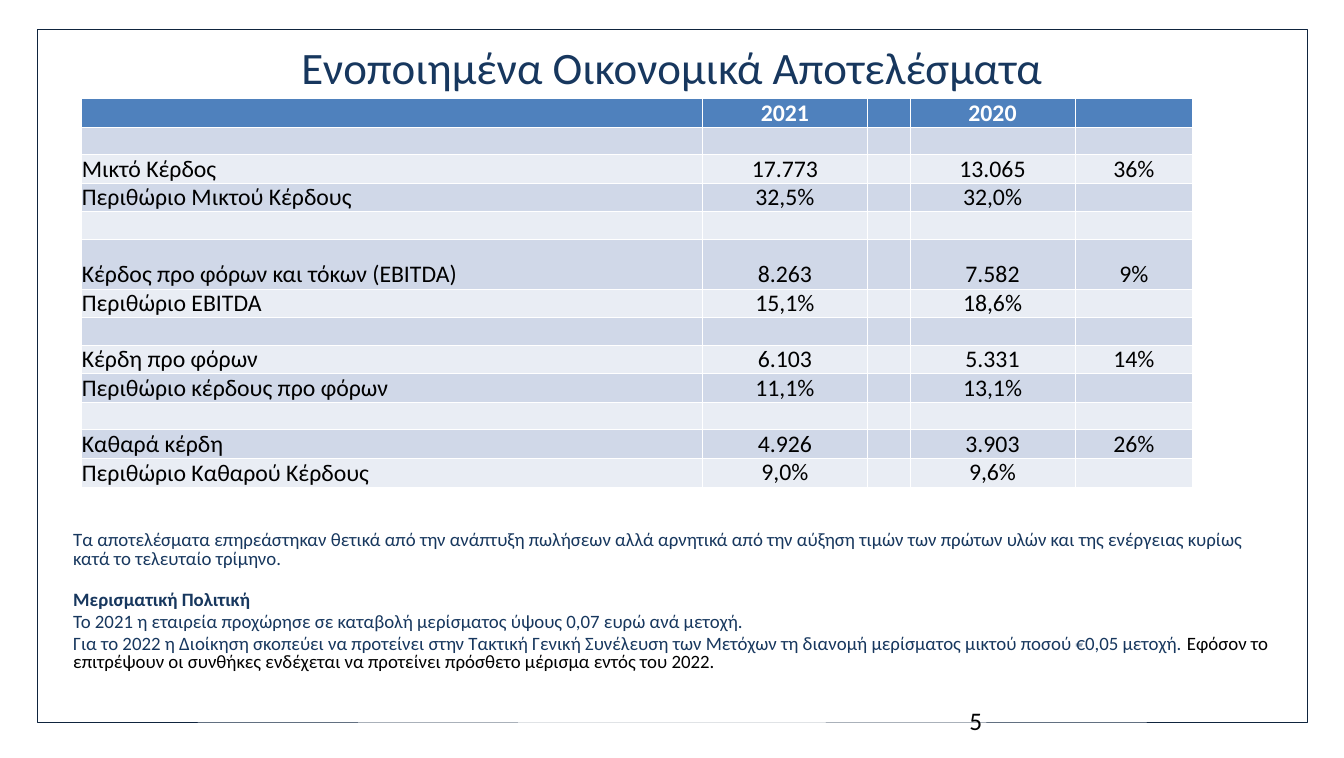
from dataclasses import dataclass
from pptx import Presentation
from pptx import util as u
from pptx.dml.color import RGBColor
from pptx.enum import shapes, text


@dataclass(frozen=True)
class Theme:
    font: str = "Calibri"
    navy: str = "17375E"
    edge: str = "0F243E"
    head: str = "4F81BD"
    bands: tuple = ("E9EDF4", "D0D8E8")
    black: str = "000000"
    white: str = "FFFFFF"
    title: float = 52.9
    cell: float = 28
    body: float = 22.2
    page: float = 29.8


T = Theme()
WIDE, HIGH = u.Inches(21.99), u.Inches(12.4)
GRID = 100
MID, LOW = text.MSO_ANCHOR.MIDDLE, text.MSO_ANCHOR.BOTTOM
LEFT, CENTER = text.PP_ALIGN.LEFT, text.PP_ALIGN.CENTER

HEADS = ["", "2021", "", "2020", ""]
ROWS = [
    [],
    ["Μικτό Κέρδος", "17.773", "", "13.065", "36%"],
    ["Περιθώριο Μικτού Κέρδους", "32,5%", "", "32,0%", ""],
    [],
    ["Κέρδος προ φόρων και τόκων (EBITDA)", "8.263", "", "7.582", "9%"],
    ["Περιθώριο EBITDA", "15,1%", "", "18,6%", ""],
    [],
    ["Κέρδη προ φόρων", "6.103", "", "5.331", "14%"],
    ["Περιθώριο κέρδους προ φόρων", "11,1%", "", "13,1%", ""],
    [],
    ["Καθαρά κέρδη", "4.926", "", "3.903", "26%"],
    ["Περιθώριο Καθαρού Κέρδους", "9,0%", "", "9,6%", ""],
]
COLS = [10.16, 2.7, 0.7, 2.7, 1.93]
TALL, FLAT, TALL_ROW = 0.82, 0.45, 5

NOTES = [
    ("Τα αποτελέσματα επηρεάστηκαν θετικά από την ανάπτυξη πωλήσεων αλλά αρνητικά από την αύξηση "
     "τιμών των πρώτων υλών και της ενέργειας κυρίως κατά το τελευταίο τρίμηνο.", 0, False),
    ("Μερισματική Πολιτική", 28, True),
    ("Το 2021 η εταιρεία προχώρησε σε καταβολή μερίσματος ύψους 0,07 ευρώ ανά μετοχή.", 4.4, False),
    ("Για το 2022 η Διοίκηση σκοπεύει να προτείνει στην Τακτική Γενική Συνέλευση των Μετόχων τη "
     "διανομή μερίσματος μικτού ποσού €0,05 μετοχή. ", 4.4, False),
]
EXTRA = ("Εφόσον το επιτρέψουν οι συνθήκες ενδέχεται να προτείνει πρόσθετο μέρισμα "
         "εντός του 2022.")


def place(x, y, w, h):
    return [round(n * side / GRID) for n, side in ((x, WIDE), (y, HIGH), (w, WIDE), (h, HIGH))]


def write(para, words, size, color, bold=False, align=None, **gaps):
    run = para.add_run()
    run.text = words
    font = run.font
    font.name, font.size, font.bold = T.font, u.Pt(size), bold
    font.color.rgb = RGBColor.from_string(color)
    if align is not None:
        para.alignment = align
    for name, gap in gaps.items():
        setattr(para, name, gap)


def paint(fill, color):
    fill.solid()
    fill.fore_color.rgb = RGBColor.from_string(color)


def panel(slide, box, anchor=text.MSO_ANCHOR.TOP):
    frame = slide.shapes.add_textbox(*box).text_frame
    frame.word_wrap = True
    frame.vertical_anchor = anchor
    return frame


def border(slide, box):
    rect = slide.shapes.add_shape(shapes.MSO_SHAPE.RECTANGLE, *box)
    rect.shadow.inherit = False
    rect.fill.background()
    rect.line.color.rgb = RGBColor.from_string(T.edge)
    rect.line.width = u.Pt(0.25)


def title(slide, box):
    frame = panel(slide, box, MID)
    write(frame.paragraphs[0], "Ενοποιημένα Oικονομικά Aποτελέσματα", T.title, T.navy,
          align=CENTER, space_after=u.Pt(6))


def results(slide, box):
    data = [HEADS] + ROWS
    table = slide.shapes.add_table(len(data), len(COLS), *box).table
    tall = [TALL if i == TALL_ROW else FLAT for i in range(len(data))]
    for col, part in zip(table.columns, COLS):
        col.width = round(box[2] * part / sum(COLS))
    for i, (row, part) in enumerate(zip(table.rows, tall)):
        row.height = round(box[3] * part / sum(tall))
        for j, cell in enumerate(row.cells):
            words = data[i][j] if data[i] else ""
            head = i == 0
            paint(cell.fill, T.head if head else T.bands[i % 2])
            cell.margin_left = cell.margin_right = cell.margin_top = cell.margin_bottom = 0
            cell.vertical_anchor = MID if head or words.startswith("Περιθώριο") else LOW
            write(cell.text_frame.paragraphs[0], words, T.cell, T.white if head else T.black,
                  bold=head, align=CENTER if j else LEFT)


def notes(slide, box):
    frame = panel(slide, box)
    frame.margin_top = u.Inches(0.35)
    for i, (words, gap, bold) in enumerate(NOTES):
        para = frame.add_paragraph() if i else frame.paragraphs[0]
        write(para, words, T.body, T.navy, bold, line_spacing=0.8, space_before=u.Pt(gap))
    write(para, EXTRA, T.body, T.black)


def number(slide, box):
    frame = panel(slide, box)
    write(frame.paragraphs[0], "5", T.page, T.black, space_after=u.Pt(6))


def main():
    deck = Presentation()
    deck.slide_width, deck.slide_height = WIDE, HIGH
    slide = deck.slides.add_slide(deck.slide_layouts[6])
    border(slide, place(2.73, 3.79, 94.5, 91.45))
    title(slide, place(5, 2.02, 90, 13.47))
    notes(slide, place(5, 67.42, 90, 22.5))
    number(slide, place(71.67, 92.66, 23.33, 5.32))
    results(slide, place(6.09, 12.98, 82.67, 50.16))
    deck.save("out.pptx")


if __name__ == "__main__":
    main()
